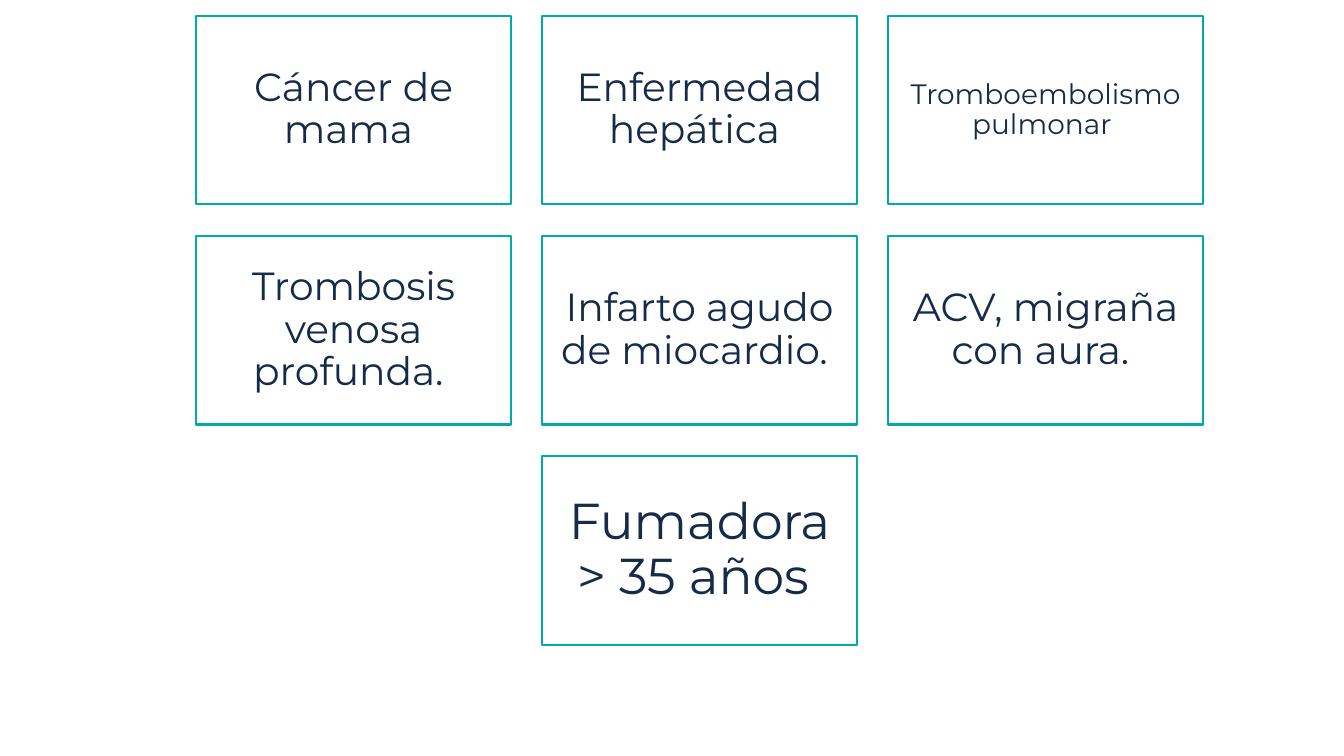
from pptx import Presentation
from pptx.dml.color import RGBColor
from pptx.enum.shapes import MSO_SHAPE as Shape
from pptx.enum.text import MSO_ANCHOR as Anchor, PP_ALIGN as Align
from pptx.util import Cm, Pt

LEFT, TOP = 4.95, 0.4
WIDTH, HEIGHT = 7.92, 4.75
STEP_X, STEP_Y = 8.72, 5.55
FONT = "Montserrat"
WHITE, TEAL, NAVY = "FFFFFF", "00AAA7", "152B48"

CONDITIONS = [
    ("Cáncer de mama ", 28, 0.3),
    ("Enfermedad hepática ", 28, 0.3),
    ("Tromboembolismo pulmonar ", 20, 0.2),
    ("Trombosis venosa profunda. ", 28, 0.3),
    ("Infarto agudo de miocardio. ", 28, 0.3),
    ("ACV, migraña con aura. ", 28, 0.3),
]
SMOKER = ("Fumadora > 35 años ", 36, 0.38)


def color(value):
    """Return the colour for a hex string."""
    return RGBColor.from_string(value)


def apply_format(target, values):
    """Set each attribute of the target from a dict."""
    for name, value in values.items():
        setattr(target, name, value)


def add_card(slide, column, row, text, size, margin):
    """Add an outlined card with centred text at a grid position."""
    shape = slide.shapes.add_shape(
        Shape.RECTANGLE, Cm(LEFT + column * STEP_X), Cm(TOP + row * STEP_Y),
        Cm(WIDTH), Cm(HEIGHT))
    shape.shadow.inherit = False
    shape.fill.solid()
    shape.fill.fore_color.rgb = color(WHITE)
    shape.line.color.rgb = color(TEAL)
    shape.line.width = Pt(1.5)
    frame = shape.text_frame
    sides = ("left", "top", "right", "bottom")
    apply_format(frame, {f"margin_{side}": Cm(margin) for side in sides})
    apply_format(frame, {"word_wrap": True, "vertical_anchor": Anchor.MIDDLE})
    paragraph = frame.paragraphs[0]
    apply_format(paragraph, {"alignment": Align.CENTER, "line_spacing": 0.9})
    run = paragraph.add_run()
    run.text = text
    apply_format(run.font, {"name": FONT, "size": Pt(size)})
    run.font.color.rgb = color(NAVY)


def main():
    """Build the slide of conditions and save it."""
    presentation = Presentation()
    apply_format(presentation, {"slide_width": Cm(33.87), "slide_height": Cm(19.05)})
    slide = presentation.slides.add_slide(presentation.slide_layouts[6])
    for index, condition in enumerate(CONDITIONS):
        row, column = divmod(index, 3)
        add_card(slide, column, row, *condition)
    add_card(slide, 1, 2, *SMOKER)
    presentation.save("out.pptx")


if __name__ == "__main__":
    main()
